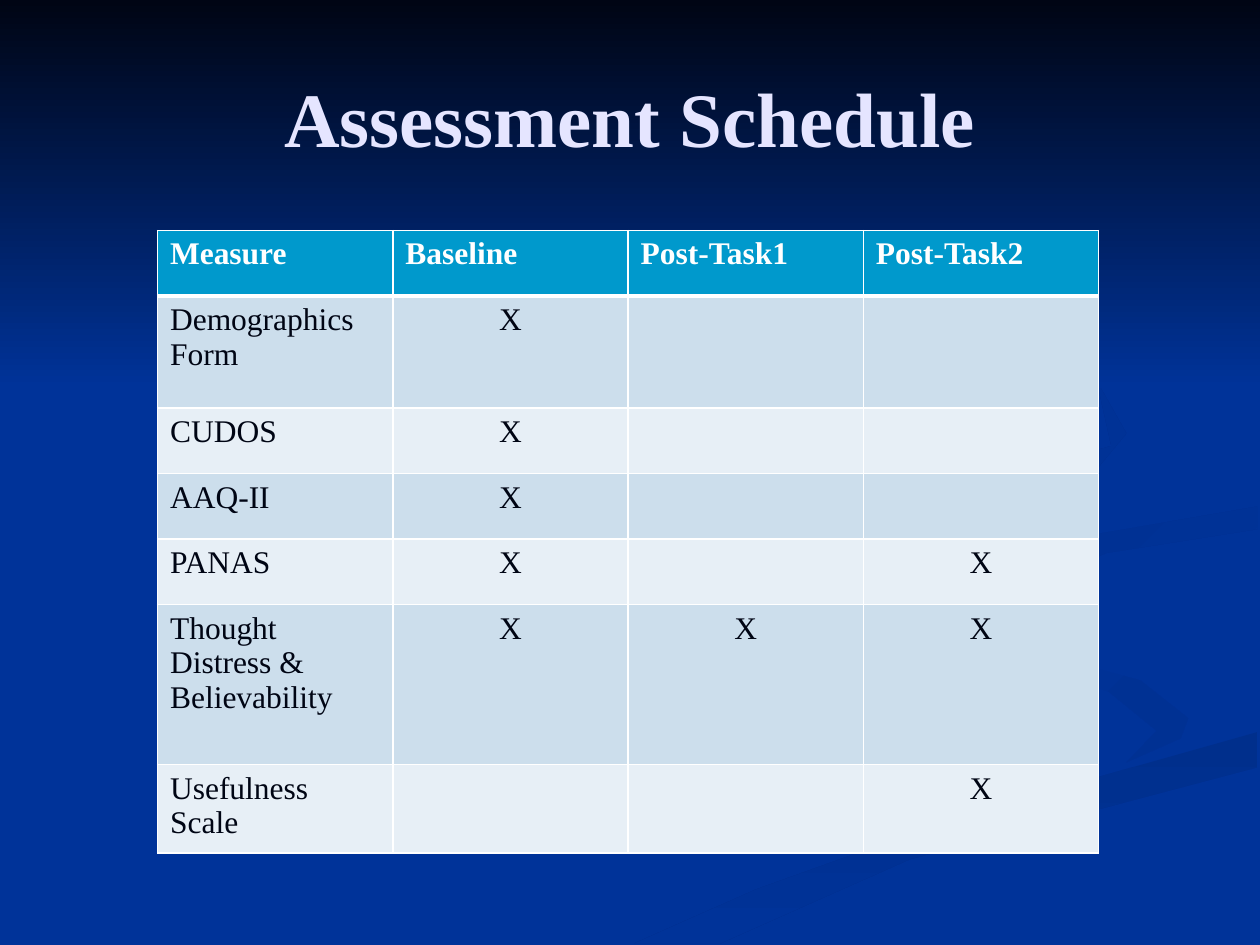
from lxml import etree
from pptx import Presentation
from pptx.dml.color import RGBColor
from pptx.enum.shapes import MSO_SHAPE
from pptx.enum.text import MSO_ANCHOR, PP_ALIGN
from pptx.oxml.ns import qn
from pptx.util import Inches, Pt

CENTER, LEFT = PP_ALIGN.CENTER, PP_ALIGN.LEFT
MIDDLE = MSO_ANCHOR.MIDDLE
RECTANGLE = MSO_SHAPE.RECTANGLE
FONT = "Times New Roman"
BLUE, NAVY, WHITE = "003399", "000514", "FFFFFF"


def color(value):
    return RGBColor.from_string(value)


def paint(shape, start, end, angle):
    """Fill a shape with a two-colour gradient, angle clockwise."""
    shape.shadow.inherit = False
    shape.line.fill.background()
    shape.fill.gradient()
    shape.fill.gradient_angle = (360 - angle) % 360
    for stop, value in zip(shape.fill.gradient_stops, (start, end)):
        stop.color.rgb = color(value)


presentation = Presentation()
presentation.slide_width = Inches(10)
presentation.slide_height = Inches(7.5)
slide = presentation.slides.add_slide(presentation.slide_layouts[6])
slide.background.fill.solid()
slide.background.fill.fore_color.rgb = color(BLUE)

# Background swirls: start colour, end colour, angle, outline points
swirls = [
    (BLUE, "003193", 45, [
        (9.43, 5.7), (9.05, 5.4), (7.6, 5), (7.24, 4.64), (7.8, 5.18),
        (8.8, 5.49), (9.18, 5.8), (8.94, 6.05), (9.37, 5.86)]),
    ("002F8C", BLUE, 90, [
        (5.03, 7.49), (5.71, 7.49), (7.22, 6.82), (9.98, 6.09),
        (9.98, 5.81), (7.64, 6.47), (6, 7.06)]),
    ("003091", BLUE, 45, [
        (7.81, 4.6), (8.26, 4.96), (8.05, 4.72), (8.78, 4.39),
        (9.98, 4.2), (9.98, 4.02), (8.35, 4.3)]),
    ("002F8E", BLUE, 45, [
        (6.83, 4.3), (8.55, 3.91), (8.94, 3.44), (8.64, 2.91), (7.62, 2.33),
        (8.7, 3), (8.82, 3.54), (6.49, 4.2), (5.77, 4.62), (6.22, 5),
        (5.93, 4.7)]),
]
for start, end, angle, points in swirls:
    corners = [(Inches(x), Inches(y)) for x, y in points]
    builder = slide.shapes.build_freeform(*corners[0], scale=1.0)
    builder.add_line_segments(corners[1:], close=True)
    paint(builder.convert_to_shape(), start, end, angle)

# Dark fade across the top
fade = slide.shapes.add_shape(RECTANGLE, 0, 0, Inches(10), Inches(3.08))
paint(fade, NAVY, BLUE, 90)

# Title
title = slide.shapes.add_textbox(Inches(0.5), Inches(0.3), Inches(9), Inches(1.25))
title.text_frame.word_wrap = True
title.text_frame.vertical_anchor = MIDDLE
paragraph = title.text_frame.paragraphs[0]
paragraph.alignment = CENTER
run = paragraph.add_run()
run.text = "Assessment Schedule"
run.font.name, run.font.size, run.font.bold = FONT, Pt(44), True
run.font.color.rgb = color("E5E5FF")

# Schedule table: row height and cell texts
rows = [
    (0.52, ["Measure", "Baseline", "Post-Task1", "Post-Task2"]),
    (0.89, ["Demographics Form", "X", "", ""]),
    (0.52, ["CUDOS", "X", "", ""]),
    (0.52, ["AAQ-II", "X", "", ""]),
    (0.52, ["PANAS", "X", "", "X"]),
    (1.27, ["Thought Distress & Believability", "X", "X", "X"]),
    (0.52, ["Usefulness Scale", "", "", "X"]),
]
table = slide.shapes.add_table(
    len(rows), 4, Inches(1.25), Inches(1.83), Inches(7.47), Inches(4.76)).table
for column in table.columns:
    column.width = Inches(7.47 / 4)

for row_index, (height, texts) in enumerate(rows):
    table.rows[row_index].height = Inches(height)
    header = row_index == 0
    band = "0099CC" if header else "CCDEEC" if row_index % 2 else "E7EFF6"
    for column_index, text in enumerate(texts):
        cell = table.cell(row_index, column_index)

        # White borders, thicker at the foot of the header
        properties = cell._tc.get_or_add_tcPr()
        for side in ("L", "R", "T", "B"):
            thick = (row_index, side) in ((0, "B"), (1, "T"))
            border = etree.SubElement(
                properties, qn(f"a:ln{side}"), w=str(Pt(3 if thick else 1)))
            border_fill = etree.SubElement(border, qn("a:solidFill"))
            etree.SubElement(border_fill, qn("a:srgbClr"), val=WHITE)
        cell.fill.solid()
        cell.fill.fore_color.rgb = color(band)

        if text:
            paragraph = cell.text_frame.paragraphs[0]
            paragraph.alignment = CENTER if text == "X" else LEFT
            run = paragraph.add_run()
            run.text = text
            run.font.name, run.font.size, run.font.bold = FONT, Pt(18), header
            run.font.color.rgb = color(WHITE if header else NAVY)

presentation.save("out.pptx")
